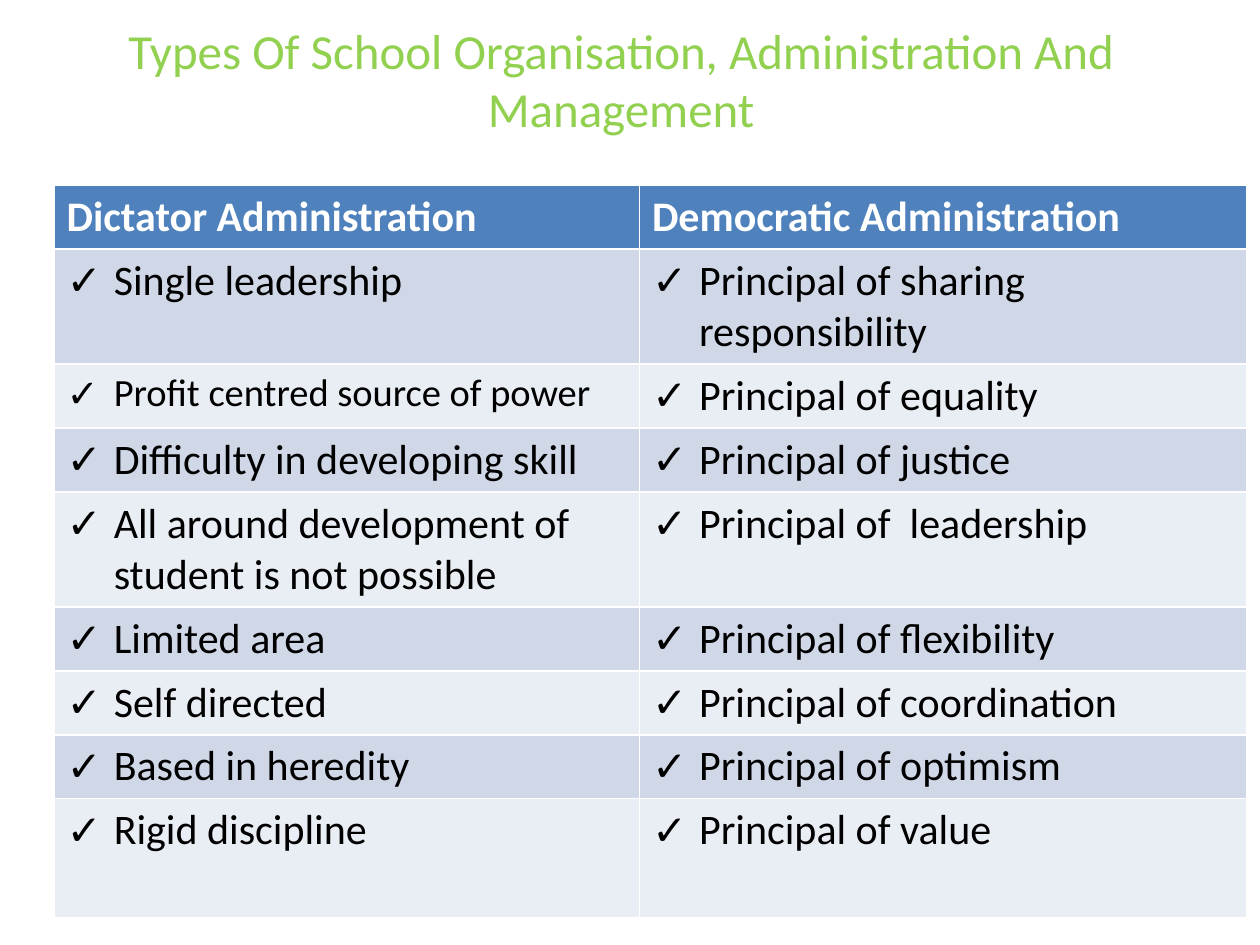
from lxml.etree import SubElement
from pptx import Presentation
from pptx.dml.color import RGBColor
from pptx.enum.text import MSO_ANCHOR, PP_ALIGN
from pptx.oxml.ns import qn
from pptx.util import Cm, Pt

GREEN = RGBColor(0x92, 0xD0, 0x50)
BLUE = RGBColor(0x4F, 0x81, 0xBD)
BAND_DARK = RGBColor(0xD0, 0xD8, 0xE8)
BAND_LIGHT = RGBColor(0xE9, 0xED, 0xF4)
WHITE = RGBColor(0xFF, 0xFF, 0xFF)
BLACK = RGBColor(0, 0, 0)

FONT = "Calibri"
LEFT = Cm(1.09)
HANGING = Cm(0.95)
COLUMN_WIDTHS = (Cm(11.8), Cm(12.24))
ROW_HEIGHT, LAST_ROW_HEIGHT = Cm(1.04), Cm(2.41)

TITLE = "Types Of School Organisation, Administration And Management"
HEADINGS = ("Dictator Administration", "Democratic Administration")
LONG_ENTRY = "Profit centred source of power"
COMPARISON = [
    ("Single leadership", "Principal of sharing responsibility"),
    (LONG_ENTRY, "Principal of equality"),
    ("Difficulty in developing skill", "Principal of justice"),
    ("All around development of student is not possible",
     "Principal of  leadership"),
    ("Limited area", "Principal of flexibility"),
    ("Self directed", "Principal of coordination"),
    ("Based in heredity", "Principal of optimism"),
    ("Rigid discipline", "Principal of value"),
]


def format_runs(paragraph, size, color, bold=False):
    for run in paragraph.runs:
        font = run.font
        font.name, font.size, font.bold = FONT, Pt(size), bold
        font.color.rgb = color


def add_check_mark(paragraph):
    properties = paragraph._p.get_or_add_pPr()
    properties.set("marL", str(HANGING))
    properties.set("indent", str(-HANGING))
    SubElement(properties, qn("a:buFont"), typeface="Arial")
    SubElement(properties, qn("a:buChar"), char="✓")


def set_title(slide):
    title = slide.shapes.title
    title.left, title.top = LEFT, Cm(0)
    title.width, title.height = Cm(22.86), Cm(3.18)
    frame = title.text_frame
    frame.text = TITLE
    frame.vertical_anchor = MSO_ANCHOR.MIDDLE
    heading = frame.paragraphs[0]
    heading.alignment = PP_ALIGN.CENTER
    format_runs(heading, 28, GREEN)


def fill_cell(cell, text, color):
    cell.fill.solid()
    cell.fill.fore_color.rgb = color
    cell.text_frame.text = text
    return cell.text_frame.paragraphs[0]


def add_comparison_table(slide):
    height = Cm(14.6)
    frame = slide.shapes.add_table(
        len(COMPARISON) + 1, len(HEADINGS), LEFT, Cm(3.73),
        sum(COLUMN_WIDTHS), height)
    table = frame.table
    for column, width in zip(table.columns, COLUMN_WIDTHS):
        column.width = width
    for row in table.rows:
        row.height = ROW_HEIGHT
    table.rows[len(COMPARISON)].height = LAST_ROW_HEIGHT
    frame.height = height  # rows grow with their text

    for col, heading in enumerate(HEADINGS):
        format_runs(fill_cell(table.cell(0, col), heading, BLUE),
                    24, WHITE, bold=True)
    for row, entries in enumerate(COMPARISON, start=1):
        band = BAND_DARK if row % 2 else BAND_LIGHT
        for col, entry in enumerate(entries):
            paragraph = fill_cell(table.cell(row, col), entry, band)
            add_check_mark(paragraph)
            format_runs(paragraph, 22 if entry == LONG_ENTRY else 24, BLACK)


def main():
    presentation = Presentation()
    presentation.slide_width, presentation.slide_height = Cm(25.4), Cm(19.05)
    slide = presentation.slides.add_slide(presentation.slide_layouts[5])
    set_title(slide)
    add_comparison_table(slide)
    presentation.save("out.pptx")


if __name__ == "__main__":
    main()
